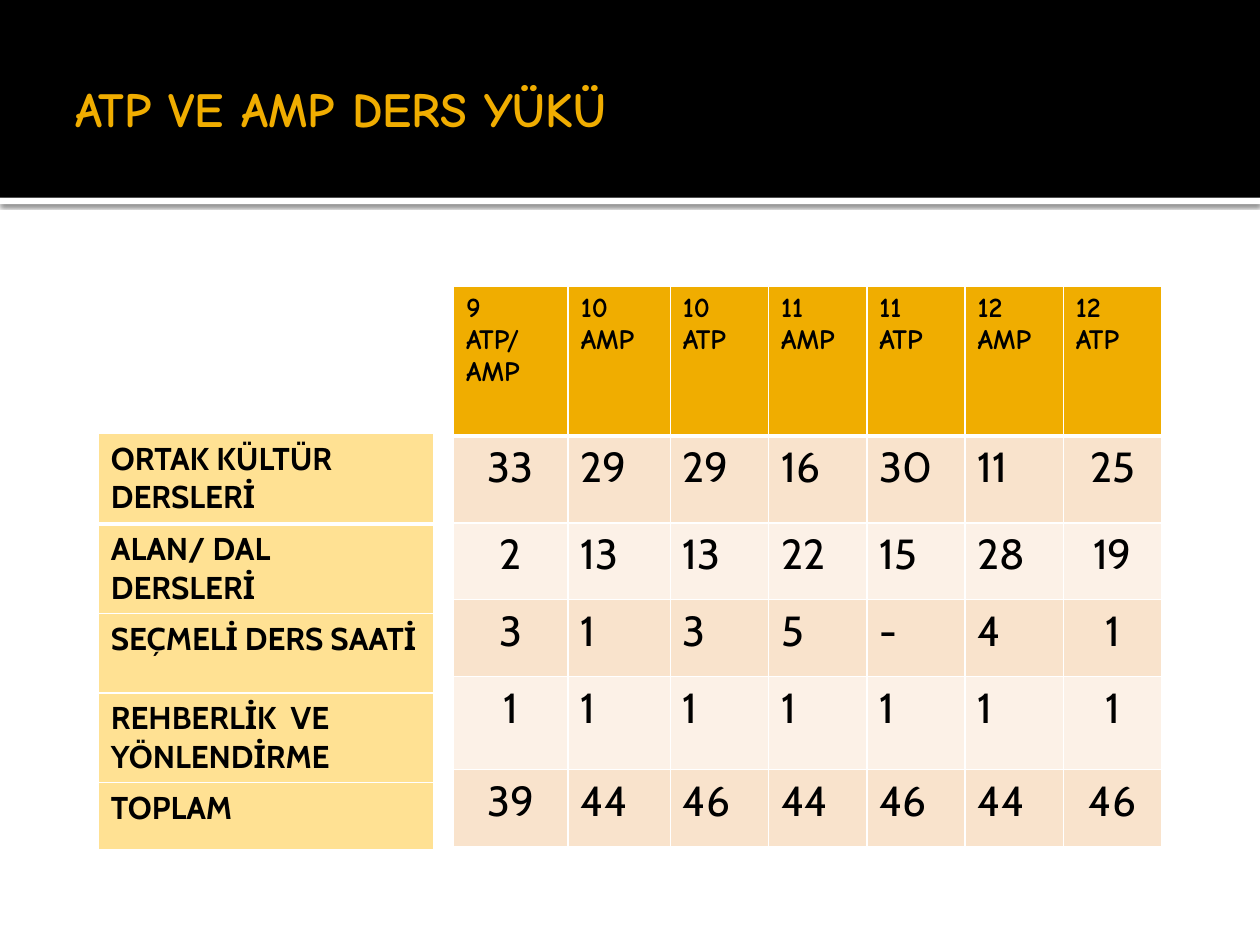
from lxml.etree import SubElement as Sub
from pptx import Presentation
from pptx.dml.color import RGBColor as Rgb
from pptx.enum.shapes import MSO_SHAPE as Shape
from pptx.enum.text import MSO_ANCHOR as Anchor, PP_ALIGN as Align
from pptx.oxml.ns import qn
from pptx.util import Inches, Pt

INK = {"black": "000000", "white": "FFFFFF", "gold": "F0AD00",
       "pale": "FFE193", "peach": "F9E3CC", "cream": "FCF1E7"}
HEAD, BODY = "Comic Neue", "Cabin"

GRADES = ["9\nATP/\nAMP", "10\nAMP", "10\nATP", "11\nAMP", "11\nATP",
          "12\nAMP", "12\nATP"]
HOURS = [
    ["33", "29", "29", "16", "30", "11", "25"],
    ["2", "13", "13", "22", "15", "28", "19"],
    ["3", "1", "3", "5", "-", "4", "1"],
    ["1"] * 7,
    ["39", "44", "46", "44", "46", "44", "46"],
]
LABELS = ["ORTAK KÜLTÜR DERSLERİ", "ALAN/ DAL DERSLERİ", "SEÇMELİ DERS SAATİ",
          "REHBERLİK  VE YÖNLENDİRME", "TOPLAM"]


def tint(name):
    return Rgb.from_string(INK[name])


def style(para, face, size, color, bold):
    font = para.font
    font.name, font.size, font.bold = face, Pt(size), bold
    font.color.rgb = tint(color)


def add_bar(slide, box, color):
    bar = slide.shapes.add_shape(Shape.RECTANGLE, *map(Inches, box))
    bar.shadow.inherit = False
    bar.fill.solid()
    bar.fill.fore_color.rgb = tint(color)
    bar.line.fill.background()
    return bar


def add_shade(bar):
    """Give the bar a soft shadow straight below it."""
    effects = bar.element.spPr.find(qn("a:effectLst"))
    shade = Sub(effects, qn("a:outerShdw"), blurRad=str(Pt(2.5)),
                dist=str(Pt(0.8)), dir="5400000", algn="tl", rotWithShape="0")
    color = Sub(shade, qn("a:srgbClr"), val=INK["black"])
    Sub(color, qn("a:alpha"), val="60000")


def add_header(slide, box, text):
    left, top, width, height = box
    strip = add_bar(slide, (left, top + height, width, 0.05), "white")
    add_shade(strip)
    band = add_bar(slide, box, "black")
    title = slide.shapes.title
    for bar in (strip, band):
        title.element.addprevious(bar.element)
    title.left, title.top, title.width, title.height = map(
        Inches, (left + 0.5, top + 0.17, width - 1, height - 0.2))
    frame = title.text_frame
    frame.text = text
    frame.word_wrap = True
    frame.vertical_anchor = Anchor.MIDDLE
    frame.margin_left = Inches(0.1)
    frame.margin_right = frame.margin_top = frame.margin_bottom = Inches(0.05)
    para = frame.paragraphs[0]
    para.alignment = Align.LEFT
    style(para, HEAD, 28, "gold", True)


def set_edges(cell, top, base):
    """Draw white cell borders; top and base are widths in points."""
    props = cell._tc.get_or_add_tcPr()
    for side, width in zip("LRTB", (1, 1, top, base)):
        line = Sub(props, qn(f"a:ln{side}"), w=str(Pt(width)))
        Sub(Sub(line, qn("a:solidFill")), qn("a:srgbClr"), val=INK["white"])


def add_grid(slide, spot, cols, rows, data, paint):
    """Add a table; paint(row, col) gives fill, face, size, bold, alignment."""
    box = (*spot, sum(cols), sum(rows))
    grid = slide.shapes.add_table(len(rows), len(cols),
                                  *map(Inches, box)).table
    grid.first_row = grid.horz_banding = False
    for col, width in zip(grid.columns, cols):
        col.width = Inches(width)
    for r, (row, height) in enumerate(zip(grid.rows, rows)):
        row.height = Inches(height)
        for c, cell in enumerate(row.cells):
            fill, face, size, bold, align = paint(r, c)
            set_edges(cell, 3 if r == 1 else 1, 3 if r == 0 else 1)
            cell.fill.solid()
            cell.fill.fore_color.rgb = tint(fill)
            cell.text = data[r][c]
            for para in cell.text_frame.paragraphs:
                para.alignment = align
                style(para, face, size, "black", bold)


def paint_hours(row, col):
    if row == 0:
        return "gold", HEAD, 16, True, Align.LEFT
    align = Align.CENTER if col in (0, 6) else Align.LEFT
    return "peach" if row % 2 else "cream", BODY, 24, False, align


def paint_label(row, col):
    return "pale", BODY, 18, True, Align.LEFT


def main():
    deck = Presentation()
    deck.slide_width, deck.slide_height = Inches(10), Inches(7.5)
    slide = deck.slides.add_slide(deck.slide_layouts[5])
    add_header(slide, (0, 0, 10, 1.57), "ATP VE AMP DERS YÜKÜ")
    add_grid(slide, (3.6, 2.27), [0.91, 0.81] + [0.78] * 5,
             [1.19, 0.69, 0.61, 0.61, 0.74, 0.61], [GRADES] + HOURS,
             paint_hours)
    add_grid(slide, (0.78, 3.44), [2.66], [0.72, 0.61, 0.63, 0.63, 0.53],
             [[label] for label in LABELS], paint_label)
    deck.save("out.pptx")


if __name__ == "__main__":
    main()
